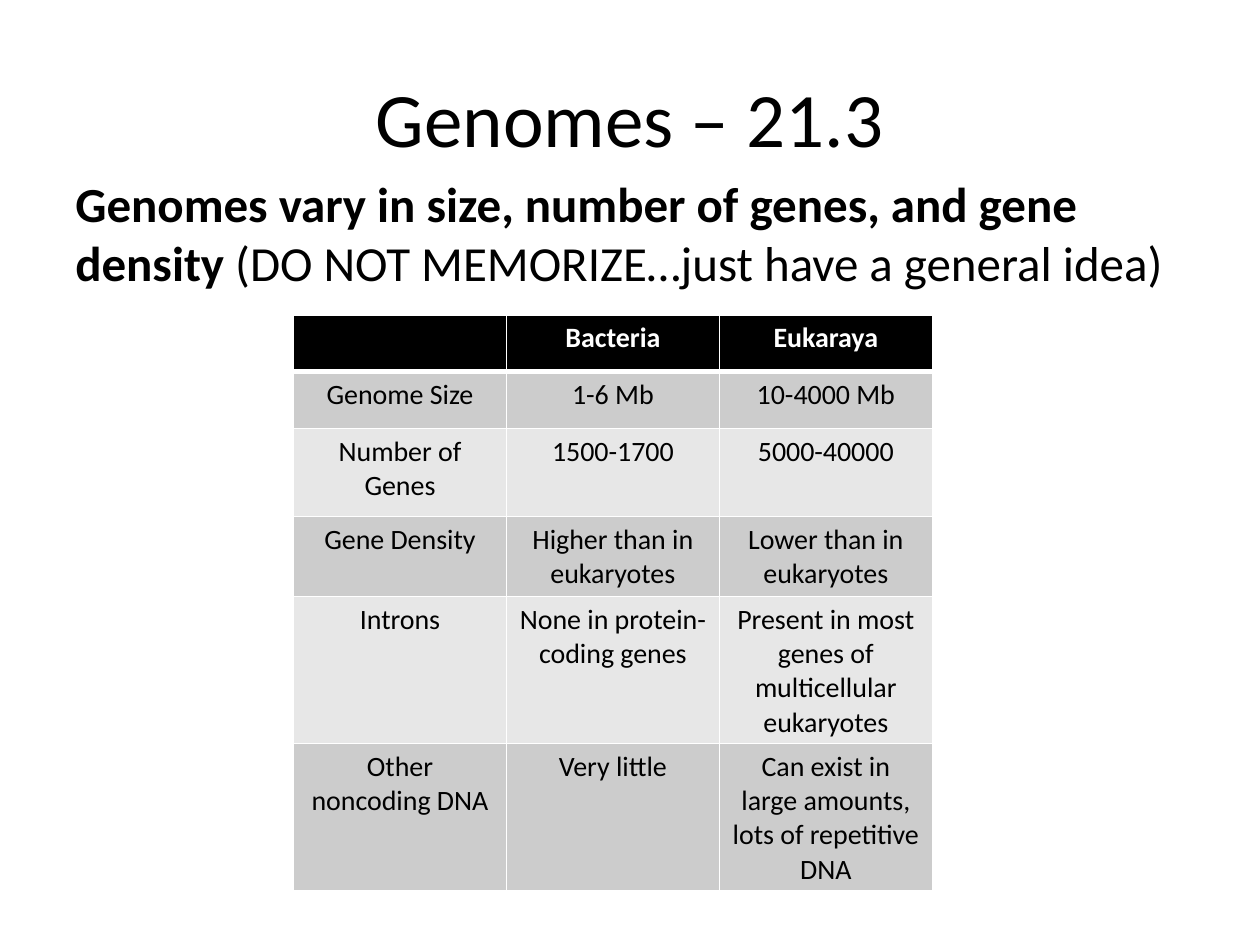
from dataclasses import dataclass

from lxml.etree import SubElement
from pptx import Presentation
from pptx.dml.color import RGBColor
from pptx.enum.text import MSO_ANCHOR as Anchor, PP_ALIGN as Align
from pptx.oxml.ns import qn
from pptx.util import Inches, Pt

FONT = "Calibri"
BLACK, WHITE = "000000", "FFFFFF"
DARK_BAND, LIGHT_BAND = "CCCCCC", "E7E7E7"
COLUMN_WIDTH = 1.69


@dataclass
class Row:
    height: float
    texts: tuple[str, str, str]


ROWS = [
    Row(0.45, ("", "Bacteria", "Eukaraya")),
    Row(0.45, ("Genome Size", "1-6 Mb", "10-4000 Mb")),
    Row(0.7, ("Number of Genes", "1500-1700", "5000-40000")),
    Row(0.58, ("Gene Density", "Higher than in eukaryotes", "Lower than in eukaryotes")),
    Row(1.08, ("Introns", "None in protein-coding genes",
               "Present in most genes of multicellular eukaryotes")),
    Row(0.83, ("Other noncoding DNA", "Very little",
               "Can exist in large amounts, lots of repetitive DNA")),
]


def color(value: str) -> RGBColor:
    return RGBColor.from_string(value)


def style_font(font, size: float, value: str = BLACK, bold: bool = False) -> None:
    font.name, font.size, font.bold = FONT, Pt(size), bold
    font.color.rgb = color(value)


def add_text_frame(slide, left: float, top: float, width: float, height: float):
    shape = slide.shapes.add_textbox(
        Inches(left), Inches(top), Inches(width), Inches(height))
    shape.text_frame.word_wrap = True
    return shape.text_frame


def set_borders(cell, top: float, bottom: float) -> None:
    properties = cell._tc.get_or_add_tcPr()
    for side, width in (("L", 1), ("R", 1), ("T", top), ("B", bottom)):
        line = SubElement(properties, qn(f"a:ln{side}"), w=str(Pt(width)))
        fill = SubElement(line, qn("a:solidFill"))
        SubElement(fill, qn("a:srgbClr"), val=WHITE)


def fill_cell(cell, text: str, row_index: int) -> None:
    header = row_index == 0
    set_borders(cell, top=3 if row_index == 1 else 1, bottom=3 if header else 1)
    band = DARK_BAND if row_index % 2 else LIGHT_BAND
    cell.fill.solid()
    cell.fill.fore_color.rgb = color(BLACK if header else band)
    cell.text_frame.text = text
    paragraph = cell.text_frame.paragraphs[0]
    paragraph.alignment = Align.CENTER
    for run in paragraph.runs:
        style_font(run.font, 16, WHITE if header else BLACK, header)


def add_genome_table(slide, left: float, top: float) -> None:
    columns = len(ROWS[0].texts)
    table = slide.shapes.add_table(
        len(ROWS), columns, Inches(left), Inches(top),
        Inches(columns * COLUMN_WIDTH), Inches(sum(row.height for row in ROWS))).table
    for column in table.columns:
        column.width = Inches(COLUMN_WIDTH)
    for row_index, row in enumerate(ROWS):
        table.rows[row_index].height = Inches(row.height)
        for column_index, text in enumerate(row.texts):
            fill_cell(table.cell(row_index, column_index), text, row_index)


def main() -> None:
    presentation = Presentation()
    presentation.slide_width, presentation.slide_height = Inches(10), Inches(7.5)
    slide = presentation.slides.add_slide(presentation.slide_layouts[6])

    # Title
    title = add_text_frame(slide, 0.5, 0.3, 9, 1.25)
    title.vertical_anchor = Anchor.MIDDLE
    title.text = "Genomes – 21.3"
    title.paragraphs[0].alignment = Align.CENTER
    style_font(title.paragraphs[0].runs[0].font, 44)

    # Key statement
    statement = add_text_frame(slide, 0.5, 1.33, 9, 5.37)
    statement.text = "Genomes vary in size, number of genes, and gene density "
    paragraph = statement.paragraphs[0]
    paragraph.space_before = Pt(5.6)
    style_font(paragraph.runs[0].font, 28, bold=True)
    remark = paragraph.add_run()
    remark.text = "(DO NOT MEMORIZE…just have a general idea)"
    style_font(remark.font, 28)

    # Comparison table
    add_genome_table(slide, 2.33, 2.5)

    presentation.save("out.pptx")


if __name__ == "__main__":
    main()
